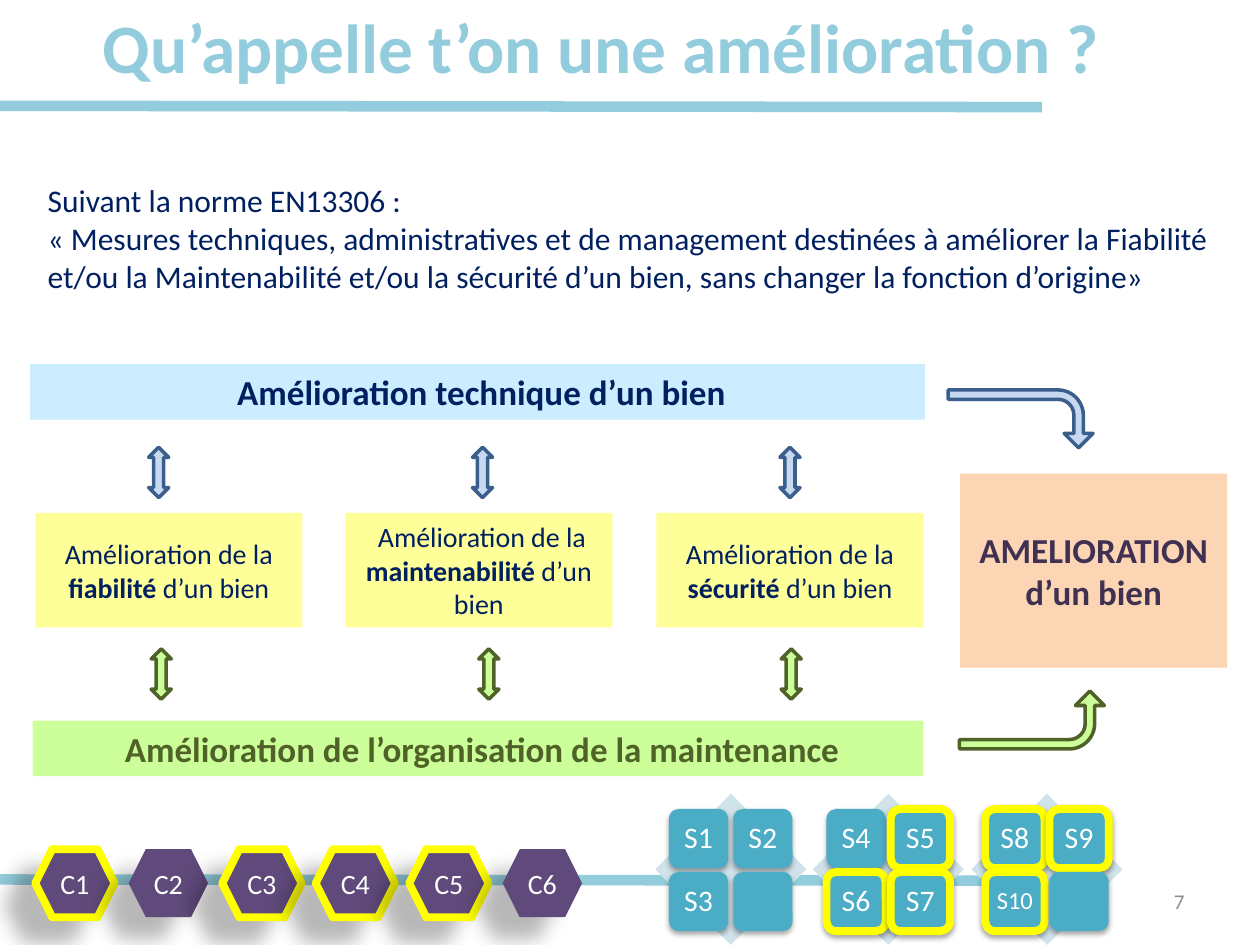
from lxml.etree import SubElement
from pptx import Presentation
from pptx.dml.color import RGBColor
from pptx.enum.shapes import MSO_CONNECTOR, MSO_SHAPE
from pptx.enum.text import MSO_ANCHOR, PP_ALIGN
from pptx.oxml.ns import qn
from pptx.util import Inches, Pt

SKY, NAVY, GREEN, YELLOW, WHITE = "93CDDD", "002060", "4F6228", "FFFF00", "FFFFFF"
BLUE_ARROW = {"fill": "C6D9F1", "line": "3A5F8C", "width": 2}
GREEN_ARROW = {"fill": "CCFF99", "line": GREEN, "width": 2}
# Shadow: opacity %, blur pt, distance pt, direction in degrees
TILE_SHADOW = (35, 3.1, 1.8, 90)
HEXAGON_SHADOW = (28, 11.8, 19.7, 141)


def rgb(color):
    return RGBColor.from_string(color)


def write(s, text, size=16, color=NAVY, bold=False, align=PP_ALIGN.CENTER,
          anchor=MSO_ANCHOR.MIDDLE, inset=None, spacing=None):
    """Fill a shape with text; newlines split paragraphs, ** toggles bold."""
    tf = s.text_frame
    tf.word_wrap = True
    tf.vertical_anchor = anchor
    if inset is not None:
        tf.margin_left = tf.margin_right = Inches(inset)
        tf.margin_top = tf.margin_bottom = Inches(inset)
    for i, line in enumerate(text.split("\n")):
        p = tf.add_paragraph() if i else tf.paragraphs[0]
        p.alignment = align
        if spacing:
            p.line_spacing = spacing
        for j, part in enumerate(line.split("**")):
            r = p.add_run()
            r.text = part
            r.font.name = "Calibri"
            r.font.size = Pt(size)
            r.font.bold = bold or j % 2 == 1
            r.font.color.rgb = rgb(color)


def add_text(shapes, x, y, w, h, text, **fmt):
    write(shapes.add_textbox(Inches(x), Inches(y), Inches(w), Inches(h)), text, **fmt)


def add_shadow(s, opacity, blur, distance, direction):
    effects = s._element.spPr.find(qn("a:effectLst"))
    outer = SubElement(effects, qn("a:outerShdw"), blurRad=str(Pt(blur)),
                       dist=str(Pt(distance)), dir=str(direction * 60000),
                       algn="ctr", rotWithShape="0")
    color = SubElement(outer, qn("a:srgbClr"), val="000000")
    SubElement(color, qn("a:alpha"), val=str(opacity * 1000))


def add_box(shapes, kind, x, y, w, h, fill, line=None, width=4.5, shadow=None):
    s = shapes.add_shape(kind, Inches(x), Inches(y), Inches(w), Inches(h))
    s.shadow.inherit = False
    s.fill.solid()
    s.fill.fore_color.rgb = rgb(fill)
    if line:
        s.line.color.rgb = rgb(line)
        s.line.width = Pt(width)
    else:
        s.line.fill.background()
    if shadow:
        add_shadow(s, *shadow)
    return s


def add_rule(shapes, x1, y1, x2, y2):
    c = shapes.add_connector(MSO_CONNECTOR.STRAIGHT, Inches(x1), Inches(y1),
                             Inches(x2), Inches(y2))
    c.line.color.rgb = rgb(SKY)
    c.line.width = Pt(6)
    SubElement(c._element.spPr, qn("a:effectLst"))


def add_bent_arrow(shapes, x, y, rotation, style, flip=False):
    s = add_box(shapes, MSO_SHAPE.BENT_ARROW, x, y, 0.46, 1.15, **style)
    for i, value in enumerate((0.162, 0.25, 0.25, 0.438)):
        s.adjustments[i] = value
    s.rotation = rotation
    if flip:
        s._element.spPr.xfrm.set("flipV", "1")


def add_matrix(shapes, x, labels, marked):
    """A diamond with a two by two grid of tiles, the marked ones outlined."""
    group = shapes.add_group_shape().shapes
    add_box(group, MSO_SHAPE.DIAMOND, x, 6.3, 1.2, 1.2, "D0E3EA")
    for i, label in enumerate(labels):
        row, col = divmod(i, 2)
        s = add_box(group, MSO_SHAPE.ROUNDED_RECTANGLE, x + 0.11 + col * 0.51,
                    6.42 + row * 0.5, 0.47, 0.47, "4BACC6",
                    line=YELLOW if label in marked else None, shadow=TILE_SHADOW)
        if label:
            write(s, label, size=14 if len(label) > 2 else 17, color=WHITE,
                  inset=0.03, spacing=0.9)


def main():
    prs = Presentation()
    prs.slide_width, prs.slide_height = Inches(10), Inches(7.5)
    shapes = prs.slides.add_slide(prs.slide_layouts[6]).shapes

    # Title and rules
    add_rule(shapes, -0.04, 6.98, 8.23, 6.99)
    add_text(shapes, 0.52, -0.27, 8.5, 1.26, "Qu’appelle t’on une amélioration ?",
             size=39.6, color=SKY, bold=True)
    add_rule(shapes, 0, 0.84, 8.27, 0.85)

    # Skill tiles
    add_matrix(shapes, 5.2, ["S1", "S2", "S3", ""], [])
    add_matrix(shapes, 6.45, ["S4", "S5", "S6", "S7"], ["S5", "S6", "S7"])
    add_matrix(shapes, 7.71, ["S8", "S9", "S10", ""], ["S8", "S9", "S10"])

    # Competence hexagons
    for i in range(6):
        label = f"C{i + 1}"
        s = add_box(shapes, MSO_SHAPE.HEXAGON, 0.28 + i * 0.742, 6.74, 0.63, 0.54,
                    "604A7B", line=None if label in ("C2", "C6") else YELLOW,
                    shadow=HEXAGON_SHADOW)
        write(s, label, color=WHITE, inset=0)

    # Definition
    add_text(shapes, 0.28, 1.39, 9.45, 1.01,
             "Suivant la norme EN13306 :\n« Mesures techniques, administratives et de "
             "management destinées à améliorer la Fiabilité et/ou la Maintenabilité "
             "et/ou la sécurité d’un bien, sans changer la fonction d’origine»",
             size=18, align=PP_ALIGN.LEFT, anchor=MSO_ANCHOR.TOP)

    # Kinds of improvement
    for x, text in ((0.28, "Amélioration de la **fiabilité** d’un bien"),
                    (2.74, " Amélioration de la **maintenabilité** d’un bien"),
                    (5.21, "Amélioration de la **sécurité** d’un bien")):
        write(add_box(shapes, MSO_SHAPE.RECTANGLE, x, 4.07, 2.12, 0.91, "FFFF99"), text)

    # Banners and result
    for x, y, w, h, fill, color, text in (
            (0.24, 2.89, 7.1, 0.44, "CCECFF", NAVY, " Amélioration technique d’un bien"),
            (0.26, 5.72, 7.07, 0.44, "CCFF99", GREEN,
             " Amélioration de l’organisation de la maintenance"),
            (7.62, 3.76, 2.12, 1.54, "FCD5B5", "403152", "AMELIORATION d’un bien")):
        s = add_box(shapes, MSO_SHAPE.RECTANGLE, x, y, w, h, fill)
        write(s, text, size=20, color=color, bold=True)

    # Arrows
    for y, style, columns in ((3.55, BLUE_ARROW, (1.18, 3.75, 6.19)),
                              (5.15, GREEN_ARROW, (1.2, 3.8, 6.2))):
        for x in columns:
            add_box(shapes, MSO_SHAPE.UP_DOWN_ARROW, x, y, 0.16, 0.4, **style)
    add_bent_arrow(shapes, 7.87, 2.75, 90, BLUE_ARROW)
    add_bent_arrow(shapes, 7.96, 5.14, 270, GREEN_ARROW, flip=True)

    # Page number
    add_text(shapes, 7.17, 6.95, 2.33, 0.4, "7", size=12, color="8C8C8C",
             align=PP_ALIGN.RIGHT)
    prs.save("out.pptx")


if __name__ == "__main__":
    main()
